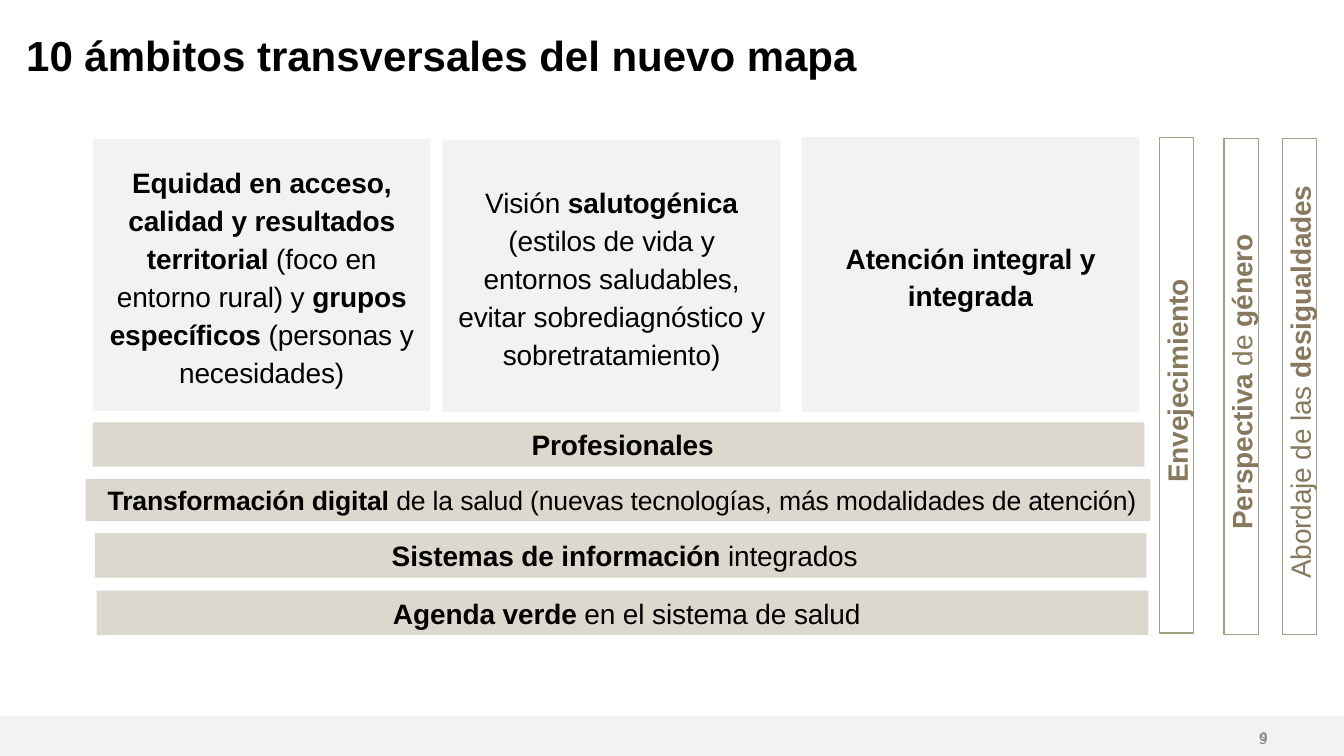
from pptx import Presentation
from pptx.dml.color import RGBColor
from pptx.enum.shapes import MSO_SHAPE
from pptx.enum.text import MSO_ANCHOR, PP_ALIGN
from pptx.util import Inches, Pt

# Content: each text is a list of (words, bold) spans
TITLE = [("10 ámbitos transversales del nuevo mapa", True)]
PAGE_NUMBER = "9"
CARDS = [  # left, top, height, text
    (0.92, 1.38, 2.70, [
        ("Equidad en acceso, calidad y resultados territorial ", True),
        ("(foco en entorno rural) y ", False),
        ("grupos específicos ", True),
        ("(personas y necesidades)", False)]),
    (4.39, 1.39, 2.70, [
        ("Visión ", False),
        ("salutogénica", True),
        (" (estilos de vida y entornos saludables, evitar "
         "sobrediagnóstico y sobretratamiento)", False)]),
    (7.95, 1.36, 2.73, [("Atención integral y integrada", True)]),
]
BARS = [  # left, top, width, height, size, text
    (0.92, 4.19, 10.43, 0.44, 20, [("Profesionales", True)]),
    (0.85, 4.75, 10.56, 0.42, 19, [
        ("Transformación digital", True),
        (" de la salud (nuevas tecnologías, más modalidades de atención)", False)]),
    (0.94, 5.29, 10.43, 0.44, 20, [
        ("Sistemas de información", True), (" integrados", False)]),
    (0.96, 5.86, 10.43, 0.44, 20, [
        ("Agenda verde ", True), ("en el sistema de salud", False)]),
]
STRIPS = [  # left and top before the quarter turn, text
    (9.21, 3.65, [("Envejecimiento", True)]),
    (9.85, 3.66, [("Perspectiva", True), (" de ", False), ("género", True)]),
    (10.43, 3.66, [("Abordaje de las ", False), ("desigualdades", True)]),
]

THEME = {
    "font": "Arial", "title": 30, "body": 20, "numbers": (9, 11),
    "black": RGBColor.from_string("000000"),
    "grey": RGBColor.from_string("808080"),
    "pale": RGBColor.from_string("F2F2F2"),
    "sand": RGBColor.from_string("DDD8CD"),
    "olive": RGBColor.from_string("9CA383"),
    "brown": RGBColor.from_string("87795D"),
}
CARD_WIDTH = 3.35
STRIP_WIDTH, STRIP_HEIGHT = 4.92, 0.34
INDENT = 0.08
TRACKING = "-10"  # hundredths of a point

deck = Presentation()
deck.slide_width, deck.slide_height = Inches(13.33), Inches(7.5)
page = deck.slides.add_slide(deck.slide_layouts[6])


def add_rect(place, fill=None, line=None):
    box = page.shapes.add_shape(MSO_SHAPE.RECTANGLE, *map(Inches, place))
    box.shadow.inherit = False
    if fill is None:
        box.fill.background()
    else:
        box.fill.solid()
        box.fill.fore_color.rgb = fill
    if line is None:
        box.line.fill.background()
    else:
        box.line.color.rgb = line
        box.line.width = Pt(0.75)
    return box


def write(box, spans, size, color, align=PP_ALIGN.CENTER, spacing=1.0,
          margins=(0, 0, 0, 0), anchor=MSO_ANCHOR.MIDDLE, tracking=None):
    frame = box.text_frame
    frame.word_wrap = True
    frame.vertical_anchor = anchor
    (frame.margin_left, frame.margin_top,
     frame.margin_right, frame.margin_bottom) = map(Inches, margins)
    para = frame.paragraphs[0]
    para.alignment = align
    para.line_spacing = spacing
    para.font.name = THEME["font"]
    para.font.size = Pt(size)
    para.font.color.rgb = color
    for words, bold in spans:
        span = para.add_run()
        span.text = words
        span.font.bold = bold
        if tracking:
            span._r.get_or_add_rPr().set("spc", tracking)


def add_label(place, spans, size, align):
    box = page.shapes.add_textbox(*map(Inches, place))
    color = THEME["black"] if spans is TITLE else THEME["grey"]
    write(box, spans, size, color, align, 0.9, anchor=MSO_ANCHOR.TOP)


# Footer band, with the page number set in two sizes
add_rect((0, 7.1, 13.33, 0.4), THEME["pale"])
for number_size in THEME["numbers"]:
    add_label((10.67, 7.25, 1.9, 0.13), [(PAGE_NUMBER, False)],
              number_size, PP_ALIGN.RIGHT)

# Title
add_label((0.26, 0.35, 12.6, 0.57), TITLE, THEME["title"], PP_ALIGN.LEFT)

# Cards
for left, top, height, spans in CARDS:
    card = add_rect((left, top, CARD_WIDTH, height), THEME["pale"])
    write(card, spans, THEME["body"], THEME["black"], spacing=Pt(27),
          margins=(0.1, 0.08, 0.1, 0.08), tracking=TRACKING)

# Horizontal bars
for left, top, width, height, size, spans in BARS:
    bar = add_rect((left, top, width, height), THEME["sand"])
    write(bar, spans, size, THEME["black"],
          margins=(0.1 + INDENT, 0.05, 0.1, 0.05), tracking=TRACKING)

# Vertical strips, read from bottom to top
for left, top, spans in STRIPS:
    strip = add_rect((left, top, STRIP_WIDTH, STRIP_HEIGHT), line=THEME["olive"])
    strip.rotation = 270
    write(strip, spans, THEME["body"], THEME["brown"],
          margins=(INDENT, 0, 0, 0), tracking=TRACKING)

deck.save("out.pptx")
